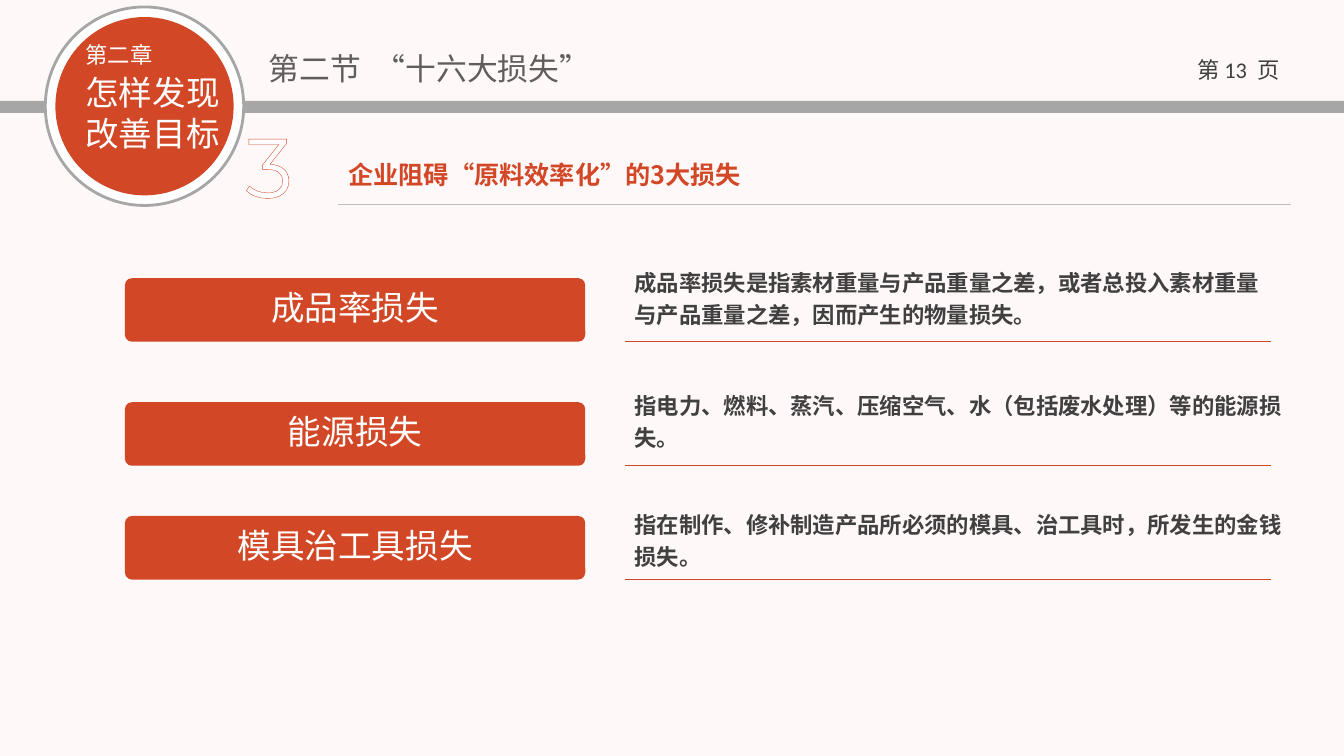
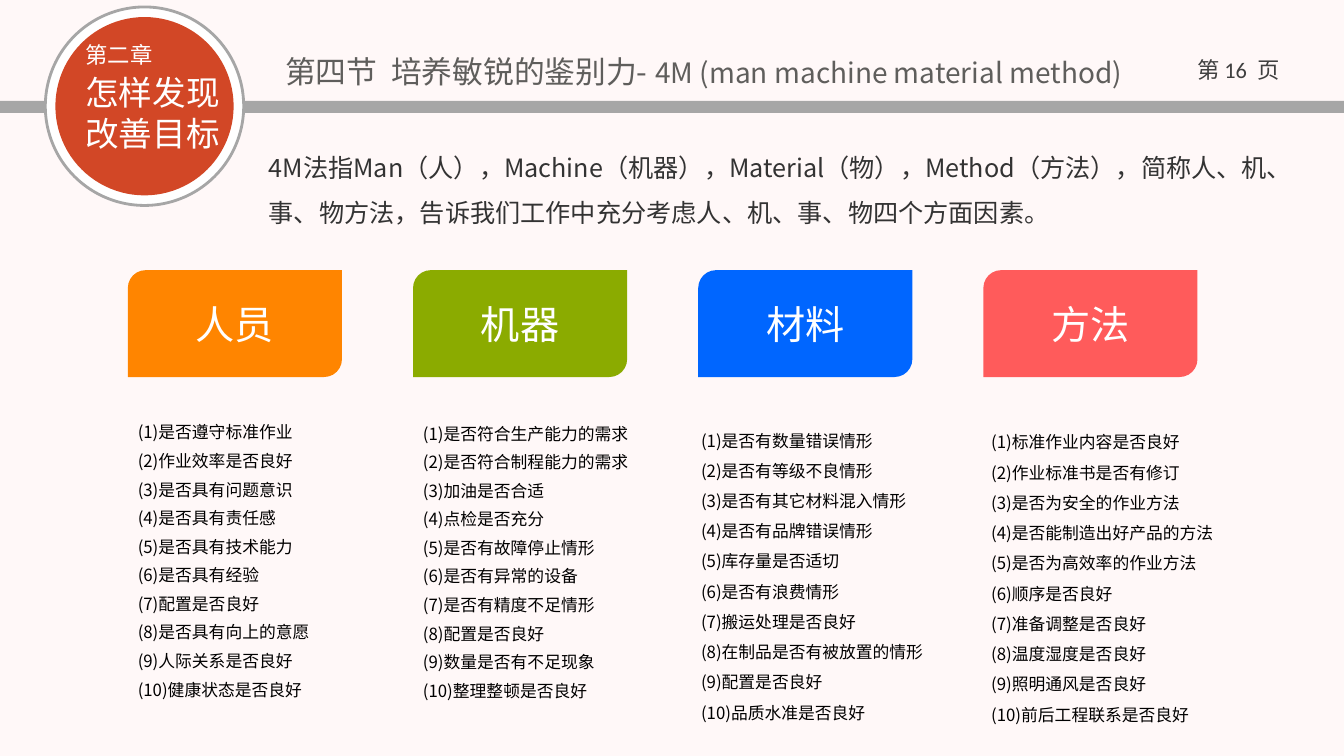
from dataclasses import dataclass
from typing import NamedTuple

from lxml import etree
from pptx import Presentation
from pptx import util as u
from pptx.dml.color import RGBColor
from pptx.enum import shapes, text
from pptx.oxml.ns import qn

SANS, LATIN, THIN = "Noto Sans CJK SC", "Calibri", "Montserrat"
RED, GREY, WHITE, PAPER = "D24726", "A6A6A6", "FFFFFF", "FFF8F8"
INK, DARK, BLACK, HEAD, RULE = "404040", "333333", "000000", "5F5E5C", "BFBFBF"
WIDE, HIGH = 960.48, 540
KIND = shapes.MSO_SHAPE
MID = text.PP_ALIGN.CENTER
LEFT = text.PP_ALIGN.LEFT


class Box(NamedTuple):
    left: float
    top: float
    width: float
    height: float


class Run(NamedTuple):
    """A piece of text and the settings in which it differs from its box."""
    words: str
    look: dict = {}


@dataclass
class Loss:
    name: str
    top: float
    note: str
    note_top: float
    note_width: float


@dataclass
class Card:
    name: str
    fill: str
    list_box: Box
    gap: dict
    checks: list[str]


LOSSES = [
    Loss("成品率损失", 198.7,
         "成品率损失是指素材重量与产品重量之差，或者总投入素材重量与产品重量之差，因而产生的物量损失。",
         185, 476),
    Loss("能源损失", 287.3,
         "指电力、燃料、蒸汽、压缩空气、水（包括废水处理）等的能源损失。", 272.9, 481.7),
    Loss("模具治工具损失", 368.6,
         "指在制作、修补制造产品所必须的模具、治工具时，所发生的金钱损失。", 357.8, 481.7),
]

SPACED, LOOSE = {"after": 6}, {"line": 1.5}
CARDS = [
    Card("人员", "FF8500", Box(91.4, 298, 153.4, 207.4), SPACED, [
        "是否遵守标准作业", "作业效率是否良好", "是否具有问题意识", "是否具有责任感",
        "是否具有技术能力", "是否具有经验", "配置是否良好", "是否具有向上的意愿",
        "人际关系是否良好", "健康状态是否良好"]),
    Card("机器", "8BAB00", Box(295.2, 298.8, 174.2, 206), SPACED, [
        "是否符合生产能力的需求", "是否符合制程能力的需求", "加油是否合适", "点检是否充分",
        "是否有故障停止情形", "是否有异常的设备", "是否有精度不足情形", "配置是否良好",
        "数量是否有不足现象", "整理整顿是否良好"]),
    Card("材料", "0066FF", Box(493.9, 296.6, 190, 225.4), LOOSE, [
        "是否有数量错误情形", "是否有等级不良情形", "是否有其它材料混入情形",
        "是否有品牌错误情形", "库存量是否适切", "是否有浪费情形", "搬运处理是否良好",
        "在制品是否有被放置的情形", "配置是否良好", "品质水准是否良好"]),
    Card("方法", "FF5B5B", Box(701.3, 298, 193, 225.4), LOOSE, [
        "标准作业内容是否良好", "作业标准书是否有修订", "是否为安全的作业方法",
        "是否能制造出好产品的方法", "是否为高效率的作业方法", "顺序是否良好",
        "准备调整是否良好", "温度湿度是否良好", "照明通风是否良好", "前后工程联系是否良好"]),
]


def tint(code: str) -> RGBColor:
    return RGBColor.from_string(code)


def style(run, size=16, color=INK, font=SANS, bold=False, italic=False, edge=None) -> None:
    face = run.font
    face.size, face.bold, face.italic, face.name = u.Pt(size), bold, italic, font
    face.color.rgb = tint(color)
    props = face._element
    props.find(qn("a:latin")).addnext(
        etree.Element(qn("a:ea"), typeface=font))
    if edge:
        line = etree.Element(qn("a:ln"), w=str(u.Pt(0.75)))
        fill = etree.SubElement(line, qn("a:solidFill"))
        etree.SubElement(fill, qn("a:srgbClr"), val=edge)
        props.insert(0, line)


def write(shape, *paras, align=LEFT, line=None, after=None, wrap=True,
          anchor=text.MSO_ANCHOR.TOP, grow=True, **look) -> None:
    """Fill a shape with paragraphs, each a string or a list of Runs."""
    frame = shape.text_frame
    frame.word_wrap, frame.vertical_anchor = wrap, anchor
    fit = text.MSO_AUTO_SIZE
    frame.auto_size = fit.SHAPE_TO_FIT_TEXT if grow else fit.NONE
    for i, runs in enumerate(paras):
        para = frame.add_paragraph() if i else frame.paragraphs[0]
        para.alignment = align
        if line is not None:
            para.line_spacing = line
        if after is not None:
            para.space_after = u.Pt(after)
        for part in [Run(runs)] if isinstance(runs, str) else runs:
            run = para.add_run()
            run.text = part.words
            style(run, **(look | part.look))


def label(slide, box: Box, *paras, **form) -> None:
    write(slide.shapes.add_textbox(*map(u.Pt, box)), *paras, **form)


def block(slide, kind, box: Box, fill: str, edge: str | None = None):
    shape = slide.shapes.add_shape(kind, *map(u.Pt, box))
    shape.shadow.inherit = False
    shape.fill.solid()
    shape.fill.fore_color.rgb = tint(fill)
    if edge:
        shape.line.color.rgb = tint(edge)
        shape.line.width = u.Pt(2)
    else:
        shape.line.fill.background()
    return shape


def rule(slide, left: float, right: float, top: float, color: str) -> None:
    line = slide.shapes.add_connector(
        shapes.MSO_CONNECTOR.STRAIGHT, *map(u.Pt, (left, top, right, top)))
    line.line.color.rgb = tint(color)
    line.line.width = u.Pt(0.75)
    etree.SubElement(line._element.spPr, qn("a:effectLst"))


def start(deck, page: int, box: Box, title: list[Run]):
    """Add a slide with its title, chapter badge, band and page number."""
    slide = deck.slides.add_slide(deck.slide_layouts[5])
    head = slide.shapes.title
    head.left, head.top, head.width, head.height = map(u.Pt, box)
    write(head, title, size=22, color=HEAD)
    block(slide, KIND.RECTANGLE, Box(0, 72, WIDE, 8.6), GREY)
    block(slide, KIND.OVAL, Box(32.4, 5, 141.8, 141.8), WHITE, GREY)
    block(slide, KIND.OVAL, Box(39.6, 12.2, 127.4, 127.4), RED)
    label(slide, Box(841.7, 36.7, 86.4, 28.8),
          [Run("第 "), Run(f"{page}  ", {"font": LATIN}), Run("页")],
          align=MID, grow=False)
    label(slide, Box(54, 25.9, 124.6, 87.8), "第二章",
          [Run("怎样发现改善目标", {"size": 24})], color=WHITE, after=3)
    return slide


def draw_losses(deck) -> None:
    slide = start(deck, 13, Box(185, 31.7, 391.7, 33.8),
                  [Run("第二节  “十六大损失”")])
    for loss in LOSSES:
        bar = block(slide, KIND.ROUNDED_RECTANGLE, Box(89.3, loss.top, 329, 45.4), RED)
        bar.adjustments[0] = 0.11
        write(bar, loss.name, size=24, color=WHITE, align=MID, line=0.9,
              anchor=text.MSO_ANCHOR.MIDDLE, grow=False)
        label(slide, Box(446.4, loss.note_top, loss.note_width, 54), loss.note,
              bold=True, line=u.Pt(23))
        rule(slide, 446.4, 908.6, loss.top + 45.4, RED)
    rule(slide, 241.9, 922.3, 146.2, RULE)
    label(slide, Box(241.9, 103, 377.3, 33.8), "企业阻碍“原料效率化”的3大损失",
          size=18, color=RED, bold=True, line=1.35)
    label(slide, Box(168.5, 77.8, 54.7, 79.9), "3",
          size=60, color=WHITE, font=THIN, edge=RED, wrap=False)


def draw_cards(deck) -> None:
    slide = start(deck, 16, Box(196.6, 31.7, 652.3, 36.7), [
        Run("第四节  培养敏锐的鉴别力-"),
        Run(" ", {"size": 24, "font": LATIN}),
        Run("4M (man machine material method)", {"size": 20})])
    label(slide, Box(185, 94.3, 748.8, 72.7),
          "4M法指Man（人），Machine（机器），Material（物），Method（方法），"
          "简称人、机、事、物方法，告诉我们工作中充分考虑人、机、事、物四个方面因素。",
          size=18, color=DARK, line=1.5)
    for i, card in enumerate(CARDS):
        tile = block(slide, KIND.ROUND_2_DIAG_RECTANGLE,
                     Box(91.4 + 203.8 * i, 193, 153, 76.3), card.fill)
        write(tile, card.name, size=28, color=WHITE, align=MID,
              anchor=text.MSO_ANCHOR.MIDDLE, grow=False)
        checks = [f"({n}){check}" for n, check in enumerate(card.checks, 1)]
        label(slide, card.list_box, *checks, size=12, color=BLACK, **card.gap)


def main() -> None:
    deck = Presentation()
    deck.slide_width, deck.slide_height = u.Pt(WIDE), u.Pt(HIGH)
    back = deck.slide_master.background.fill
    back.solid()
    back.fore_color.rgb = tint(PAPER)
    draw_losses(deck)
    draw_cards(deck)
    deck.save("out.pptx")


if __name__ == "__main__":
    main()
